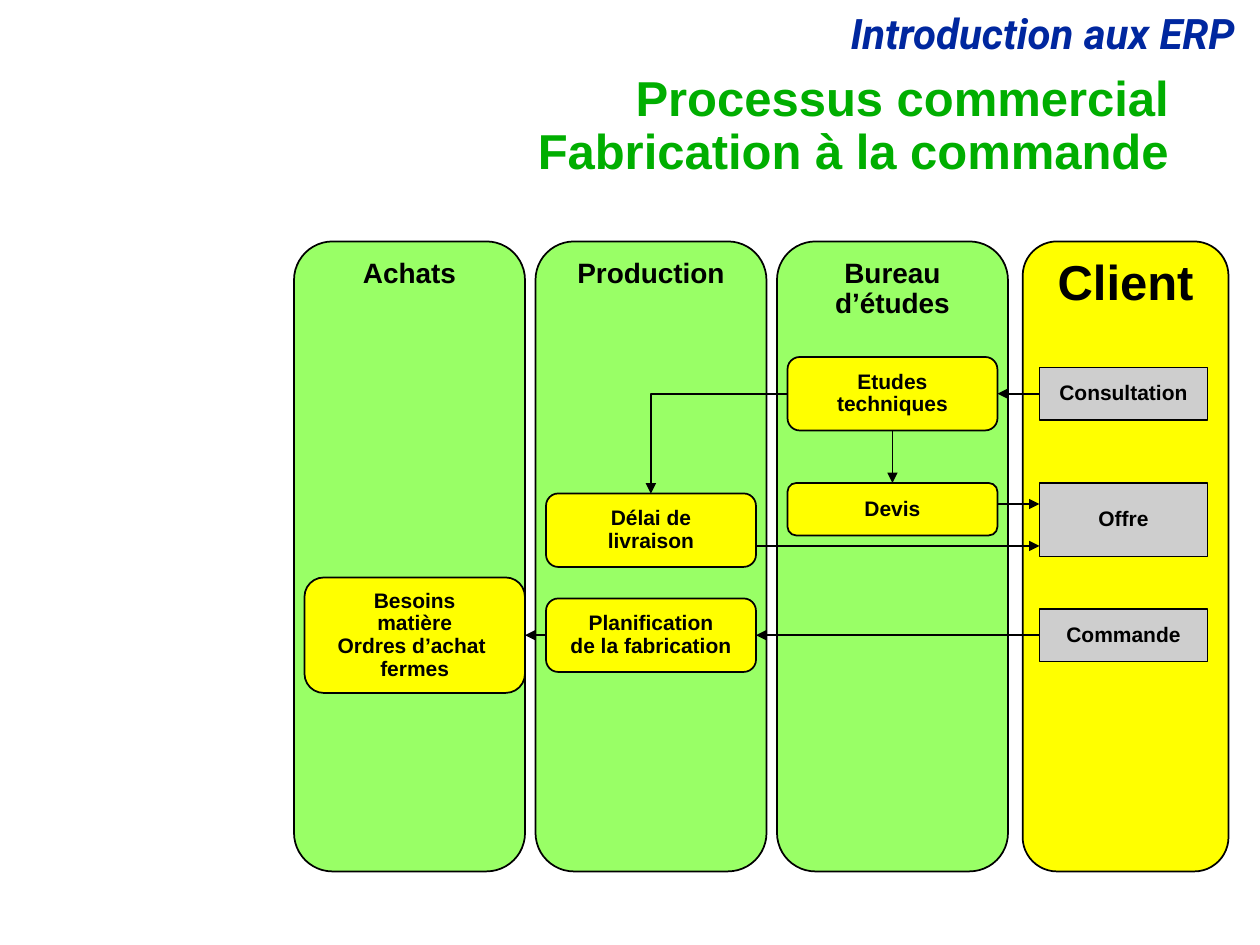
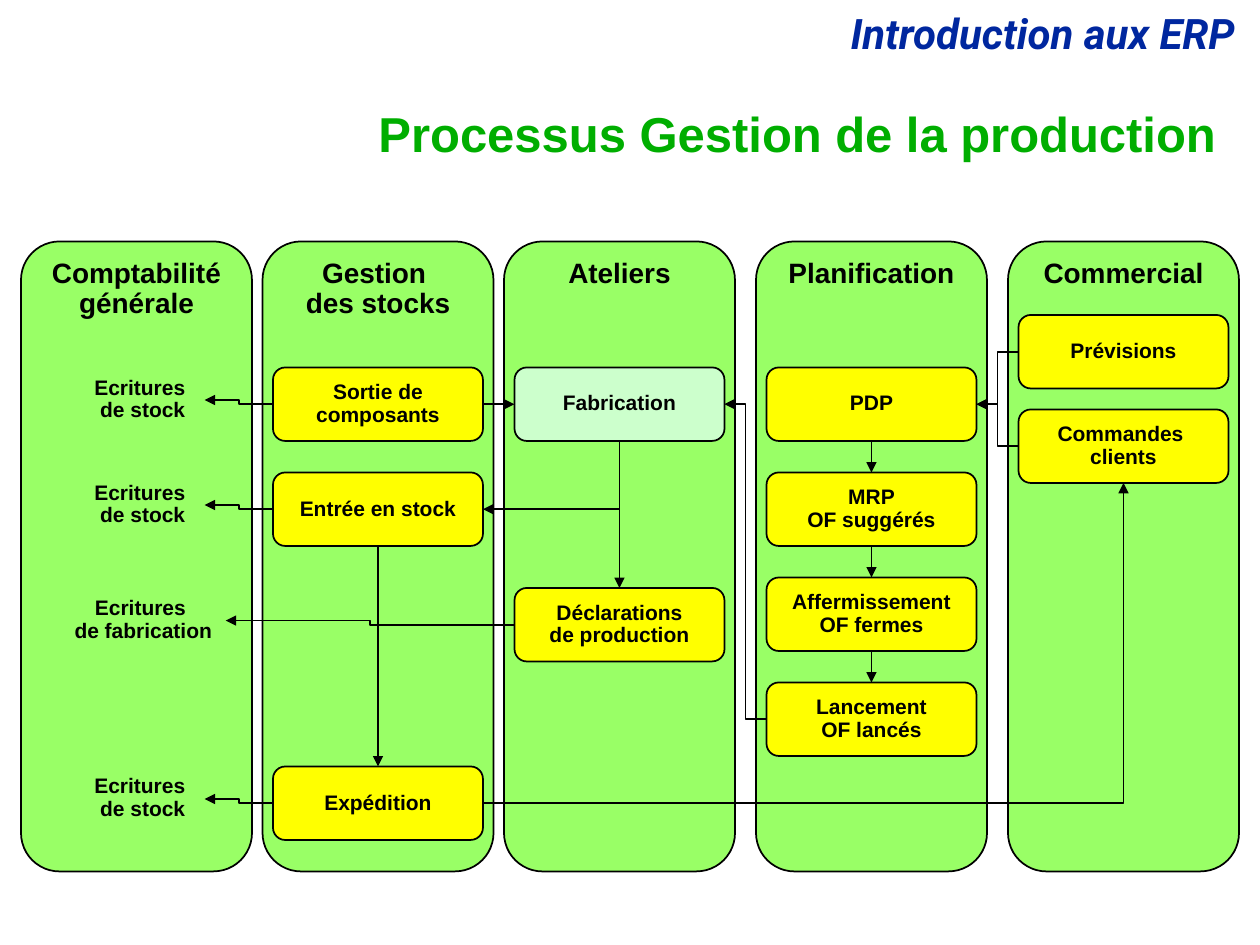
from typing import NamedTuple

from pptx import Presentation
from pptx.dml.color import RGBColor
from pptx.enum.shapes import MSO_CONNECTOR, MSO_SHAPE
from pptx.enum.text import MSO_ANCHOR, MSO_AUTO_SIZE, PP_ALIGN
from pptx.oxml.ns import qn
from pptx.oxml.xmlchemy import OxmlElement
from pptx.util import Emu, Pt

PX = 7620  # 120 px to the inch
SLIDE_SIZE = (1200, 900)
BLACK, BLUE, TITLE_GREEN = "000000", "00279F", "00AE00"
GREEN, PALE_GREEN, YELLOW, GREY = "99FF66", "CCFFCC", "FFFF00", "CECECE"
TOP, LEFT, BOTTOM, RIGHT = range(4)
SIDES = (LEFT, RIGHT)
LANE_TOP, LANE_HEIGHT = 230, 600
HEADER, HEADER_AT = "Introduction aux ERP", (278, 7, 910, 55)


class Step(NamedTuple):
    """A box in a lane; without a fill it is a bare label. \\n parts paragraphs, \\v lines."""
    text: str
    top: int
    height: int = 70
    width: int = 200
    margin: int = 10
    fill: str = YELLOW


class Lane(NamedTuple):
    title: str
    left: int
    steps: dict
    width: int = 220
    fill: str = GREEN
    size: int = 16


class Flow(NamedTuple):
    """An arrow between two sides; level is a y that replaces the middle of both sides."""
    start: str
    start_side: int
    end: str
    end_side: int
    level: int = None


def client_step(text, top, height=50):
    return Step(text, top, height, width=160, margin=16, fill=GREY)


def entry(kind, stock_middle, width=118, margin=57):
    return Step(f"Ecritures \n{kind}", stock_middle - 32, 56, width, margin, fill=None)


SLIDES = [
    {
        "title": "Processus commercial\vFabrication à la commande",
        "title_at": (175, 91, 950, 60),
        "lanes": [
            Lane("Achats", 280, {
                "besoins": Step("Besoins\vmatière\nOrdres d’achat \vfermes", 550, 110, 210),
            }),
            Lane("Production", 510, {
                "délai": Step("Délai de\vlivraison", 470),
                "planification": Step("Planification\vde la fabrication", 570),
            }),
            Lane("Bureau\vd’études", 740, {
                "études": Step("Etudes\vtechniques", 340),
                "devis": Step("Devis", 460, 50),
            }),
            Lane("Client", 974, {
                "consultation": client_step("Consultation", 350),
                "offre": client_step("Offre", 460, 70),
                "commande": client_step("Commande", 580),
            }, 196, YELLOW, 28),
        ],
        "flows": [
            Flow("consultation", LEFT, "études", RIGHT),
            Flow("études", BOTTOM, "devis", TOP),
            Flow("études", LEFT, "délai", TOP),
            Flow("devis", RIGHT, "offre", LEFT, 480),
            Flow("délai", RIGHT, "offre", LEFT, 520),
            Flow("commande", LEFT, "planification", RIGHT),
            Flow("planification", LEFT, "besoins", RIGHT),
        ],
    },
    {
        "title": "Processus Gestion de la production",
        "title_at": (50, 100, 1120, 60),
        "lanes": [
            Lane("Comptabilité\vgénérale", 20, {
                "écriture sortie": entry("de stock", 385),
                "écriture entrée": entry("de stock", 485),
                "écriture fabrication": entry("de fabrication", 595, 157, 38),
                "écriture expédition": entry("de stock", 765),
            }),
            Lane("Gestion \vdes stocks", 250, {
                "sortie": Step("Sortie de\vcomposants", 350),
                "entrée": Step("Entrée en stock", 450),
                "expédition": Step("Expédition", 730),
            }),
            Lane("Ateliers", 480, {
                "fabrication": Step("Fabrication", 350, fill=PALE_GREEN),
                "déclarations": Step("Déclarations\vde production", 560),
            }),
            Lane("Planification", 720, {
                "PDP": Step("PDP", 350),
                "MRP": Step("MRP\vOF suggérés", 450),
                "affermissement": Step("Affermissement\vOF fermes", 550),
                "lancement": Step("Lancement\vOF lancés", 650),
            }),
            Lane("Commercial", 960, {
                "prévisions": Step("Prévisions", 300),
                "commandes": Step("Commandes \vclients", 390),
            }),
        ],
        "flows": [
            Flow("prévisions", LEFT, "PDP", RIGHT),
            Flow("commandes", LEFT, "PDP", RIGHT),
            Flow("PDP", BOTTOM, "MRP", TOP),
            Flow("MRP", BOTTOM, "affermissement", TOP),
            Flow("affermissement", BOTTOM, "lancement", TOP),
            Flow("lancement", LEFT, "fabrication", RIGHT),
            Flow("sortie", RIGHT, "fabrication", LEFT),
            Flow("fabrication", BOTTOM, "déclarations", TOP),
            Flow("fabrication", BOTTOM, "entrée", RIGHT),
            Flow("entrée", BOTTOM, "expédition", TOP),
            Flow("expédition", RIGHT, "commandes", BOTTOM),
            Flow("sortie", LEFT, "écriture sortie", RIGHT),
            Flow("entrée", LEFT, "écriture entrée", RIGHT),
            Flow("déclarations", LEFT, "écriture fabrication", RIGHT),
            Flow("expédition", LEFT, "écriture expédition", RIGHT),
        ],
    },
]


def emu(*lengths):
    return [Emu(round(length * PX)) for length in lengths]


def rgb(color):
    return RGBColor.from_string(color)


def write(frame, text, size, color=BLACK, align=PP_ALIGN.CENTER, anchor=MSO_ANCHOR.MIDDLE,
          wrap=False, font="Arial", italic=False):
    frame.word_wrap = wrap
    frame.vertical_anchor = anchor
    for number, lines in enumerate(text.split("\n")):
        paragraph = frame.add_paragraph() if number else frame.paragraphs[0]
        paragraph.alignment = align
        paragraph.line_spacing = 0.9
        for row, line in enumerate(lines.split("\v")):
            if row:
                paragraph.add_line_break()
            run = paragraph.add_run()
            run.text = line
            run.font.name, run.font.size = font, Pt(size)
            run.font.bold, run.font.italic = True, italic
            run.font.color.rgb = rgb(color)


def add_panel(slide, kind, place, fill):
    panel = slide.shapes.add_shape(kind, *emu(*place))
    panel.shadow.inherit = False
    panel.fill.solid()
    panel.fill.fore_color.rgb = rgb(fill)
    panel.line.color.rgb = rgb(BLACK)
    panel.line.width = Pt(1)
    return panel


def add_lane(slide, lane):
    place = (lane.left, LANE_TOP, lane.width, LANE_HEIGHT)
    panel = add_panel(slide, MSO_SHAPE.ROUNDED_RECTANGLE, place, lane.fill)
    write(panel.text_frame, lane.title, lane.size, anchor=MSO_ANCHOR.TOP)


def add_step(slide, step, place):
    if step.fill:
        kind = MSO_SHAPE.RECTANGLE if step.fill == GREY else MSO_SHAPE.ROUNDED_RECTANGLE
        box = add_panel(slide, kind, place, step.fill)
    else:
        box = slide.shapes.add_textbox(*emu(*place))
        box.text_frame.auto_size = MSO_AUTO_SIZE.SHAPE_TO_FIT_TEXT
    write(box.text_frame, step.text, 12,
          anchor=MSO_ANCHOR.MIDDLE if step.fill else MSO_ANCHOR.TOP)
    return box


def side_point(place, side, level):
    left, top, width, height = place
    x = left + {LEFT: 0, RIGHT: width}.get(side, width / 2)
    y = top + {TOP: 0, BOTTOM: height}.get(side, height / 2)
    return x, level or y


def add_flow(slide, flow, places, boxes):
    x1, y1 = side_point(places[flow.start], flow.start_side, flow.level)
    x2, y2 = side_point(places[flow.end], flow.end_side, flow.level)
    straight = x1 == x2 or y1 == y2
    one_corner = not straight and (flow.start_side in SIDES) != (flow.end_side in SIDES)
    turned = one_corner and flow.start_side not in SIDES
    if turned:  # leaves downwards: laid out sideways, then rotated a quarter turn
        x, y = (x1 + x2) / 2, (y1 + y2) / 2
        half_width, half_height = (y2 - y1) / 2, (x1 - x2) / 2
        x1, y1, x2, y2 = x - half_width, y - half_height, x + half_width, y + half_height

    kind = MSO_CONNECTOR.STRAIGHT if straight else MSO_CONNECTOR.ELBOW
    arrow = slide.shapes.add_connector(kind, *emu(x1, y1, x2, y2))
    if straight and flow.level is None:
        arrow.begin_connect(boxes[flow.start], flow.start_side)
        arrow.end_connect(boxes[flow.end], flow.end_side)
    arrow.line.color.rgb = rgb(BLACK)
    arrow.line.width = Pt(1)
    properties = arrow.element.spPr
    if one_corner:
        properties.find(qn("a:prstGeom")).set("prst", "bentConnector2")
    if turned:
        properties.find(qn("a:xfrm")).set("rot", "5400000")
    head = OxmlElement("a:tailEnd")
    head.set("type", "triangle")
    properties.find(qn("a:ln")).append(head)
    properties.append(OxmlElement("a:effectLst"))


def add_header(layout, slide):
    """Write the running header and hand it over to the layout that all slides share."""
    header = slide.shapes.add_textbox(*emu(*HEADER_AT))
    write(header.text_frame, HEADER, 24, BLUE, PP_ALIGN.RIGHT, MSO_ANCHOR.TOP,
          wrap=True, font="Roboto", italic=True)
    layout.shapes.element.append(header.element)


def add_process(slide, content):
    title = slide.shapes.title
    title.left, title.top, title.width, title.height = emu(*content["title_at"])
    title.text_frame.auto_size = MSO_AUTO_SIZE.NONE
    write(title.text_frame, content["title"], 28, TITLE_GREEN, PP_ALIGN.RIGHT, wrap=True)

    places, boxes = {}, {}
    for lane in content["lanes"]:
        add_lane(slide, lane)
        for name, step in lane.steps.items():
            places[name] = (lane.left + step.margin, step.top, step.width, step.height)
            boxes[name] = add_step(slide, step, places[name])
    for flow in content["flows"]:
        add_flow(slide, flow, places, boxes)


def main():
    deck = Presentation()
    deck.slide_width, deck.slide_height = emu(*SLIDE_SIZE)
    layout = deck.slide_layouts[5]
    for number, content in enumerate(SLIDES):
        slide = deck.slides.add_slide(layout)
        if number == 0:
            add_header(layout, slide)
        add_process(slide, content)
    deck.save("out.pptx")


if __name__ == "__main__":
    main()
